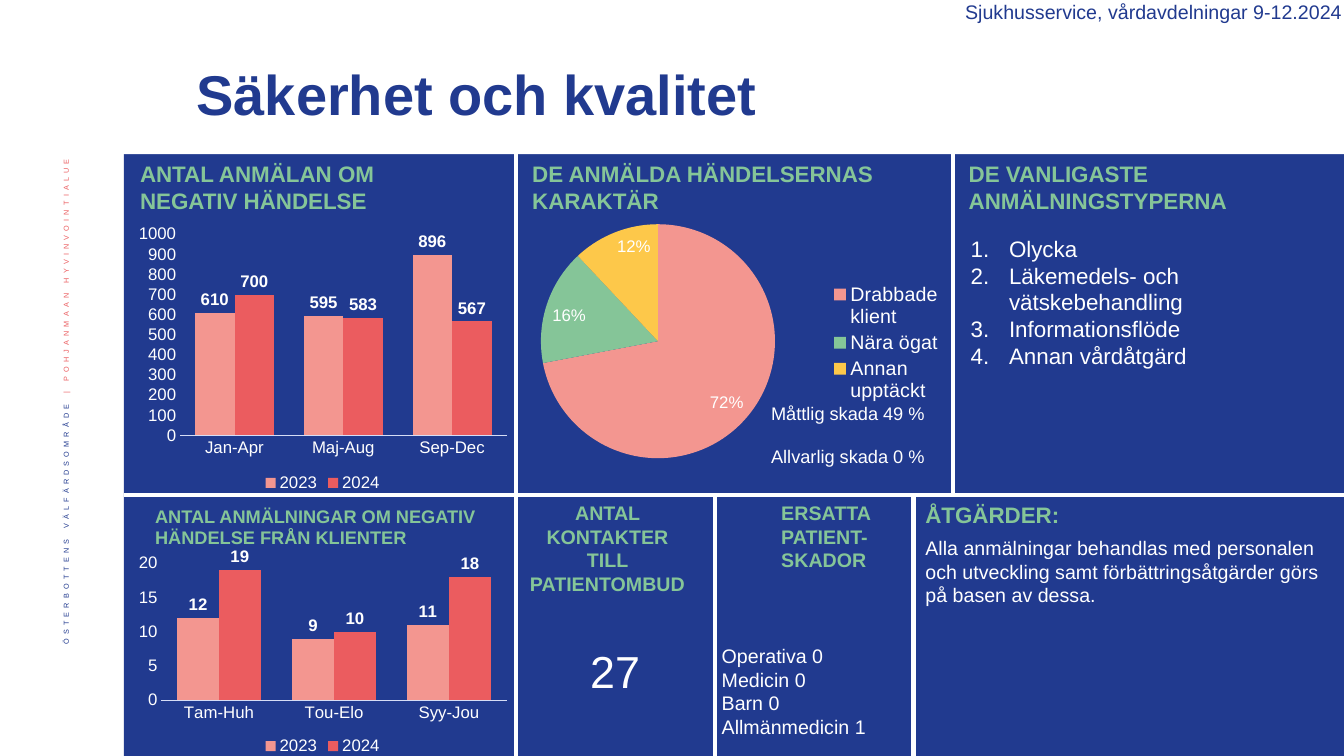
from lxml import etree
from pptx import Presentation
from pptx.chart.data import CategoryChartData
from pptx.dml.color import RGBColor
from pptx.enum.chart import XL_CHART_TYPE, XL_LABEL_POSITION, XL_LEGEND_POSITION, XL_TICK_MARK
from pptx.enum.shapes import MSO_CONNECTOR, MSO_SHAPE
from pptx.enum.text import MSO_ANCHOR, PP_ALIGN
from pptx.oxml.ns import qn
from pptx.util import Inches, Pt

LEFT, MID, RIGHT = PP_ALIGN.LEFT, PP_ALIGN.CENTER, PP_ALIGN.RIGHT
TOP, CENTER = MSO_ANCHOR.TOP, MSO_ANCHOR.MIDDLE
PIE, COLUMN = XL_CHART_TYPE.PIE, XL_CHART_TYPE.COLUMN_CLUSTERED
BELOW, BESIDE = XL_LEGEND_POSITION.BOTTOM, XL_LEGEND_POSITION.RIGHT
INSIDE, OUTSIDE = XL_LABEL_POSITION.INSIDE_END, XL_LABEL_POSITION.OUTSIDE_END
NO_TICK = XL_TICK_MARK.NONE
RECT, STRAIGHT = MSO_SHAPE.RECTANGLE, MSO_CONNECTOR.STRAIGHT

NAVY, WHITE, GREEN = "213A8F", "FFFFFF", "85C598"
PINK, RED, GOLD, PALE = "F39690", "EB5C5F", "FDC84A", "D6DDF6"


def color(code):
    return RGBColor.from_string(code)


def style(font, size, fill, bold=False):
    font.name, font.size, font.bold = "Arial", Pt(size), bold
    font.color.rgb = color(fill)


class Board:
    def __init__(self, slide):
        self.slide = slide
        self.shapes = slide.shapes

    def rect(self, x, y, w, h, fill):
        box = self.shapes.add_shape(RECT, Inches(x), Inches(y), Inches(w), Inches(h))
        box.shadow.inherit = False
        box.fill.solid()
        box.fill.fore_color.rgb = color(fill)
        box.line.fill.background()

    def rule(self, x1, y1, x2, y2):
        line = self.shapes.add_connector(STRAIGHT, Inches(x1), Inches(y1), Inches(x2), Inches(y2))
        line.line.color.rgb = color(WHITE)
        line.line.width = Pt(3)
        etree.SubElement(line._element.spPr, qn("a:effectLst"))

    def text(self, words, x, y, w, h, size=14, fill=WHITE, bold=False, align=LEFT,
             anchor=TOP, gap=0, lead=None, indent=0, numbered=False):
        """Each paragraph is a string or a list of (string, colour) runs."""
        box = self.shapes.add_textbox(Inches(x), Inches(y), Inches(w), Inches(h))
        frame = box.text_frame
        frame.word_wrap = True
        frame.vertical_anchor = anchor
        for i, para in enumerate([words] if isinstance(words, str) else words):
            p = frame.paragraphs[0] if i == 0 else frame.add_paragraph()
            p.alignment = align
            if lead:
                p.line_spacing = lead
            if i and gap:
                p.space_before = Pt(gap)
            if indent:
                props = p._p.get_or_add_pPr()
                props.set("marL", str(Inches(indent)))
                if numbered:
                    props.set("indent", str(-Inches(indent)))
                    etree.SubElement(props, qn("a:buAutoNum"), type="arabicPeriod")
            for part, tint in [(para, fill)] if isinstance(para, str) else para:
                run = p.add_run()
                run.text = part
                style(run.font, size, tint, bold)
        return frame

    def head(self, words, x, y, w, h, size=16, **form):
        self.text(words, x, y, w, h, size=size, fill=GREEN, bold=True, **form)

    def chart(self, kind, x, y, w, h, cats, series, place, size):
        data = CategoryChartData()
        data.categories = cats
        for name, vals in series.items():
            data.add_series(name, vals)
        frame = self.shapes.add_chart(kind, Inches(x), Inches(y), Inches(w), Inches(h), data)
        chart = frame.chart
        style(chart.font, 10, NAVY)
        chart.has_title = False
        chart.has_legend = True
        chart.legend.position = place
        chart.legend.include_in_layout = False
        style(chart.legend.font, size, WHITE)
        return chart

    def labels(self, plot, spot, bold):
        plot.has_data_labels = True
        marks = plot.data_labels
        marks.position = spot
        style(marks.font, 12, WHITE, bold)
        return marks

    def columns(self, x, y, w, h, cats, series, top, step):
        chart = self.chart(COLUMN, x, y, w, h, cats, series, BELOW, 12)
        plot = chart.plots[0]
        plot.gap_width, plot.overlap = 75, 0
        plot.vary_by_categories = False
        self.labels(plot, OUTSIDE, True).show_value = True
        for bars, fill in zip(plot.series, (PINK, RED)):
            bars.format.fill.solid()
            bars.format.fill.fore_color.rgb = color(fill)
        for axis in (chart.category_axis, chart.value_axis):
            axis.has_major_gridlines = False
            axis.major_tick_mark = axis.minor_tick_mark = NO_TICK
            style(axis.tick_labels.font, 12, WHITE)
        chart.category_axis.format.line.color.rgb = color(PALE)
        chart.category_axis.format.line.width = Pt(0.75)
        scale = chart.value_axis
        scale.format.line.fill.background()
        scale.minimum_scale, scale.maximum_scale, scale.major_unit = 0, top, step

    def pie(self, x, y, w, h, cats, series, fills, area):
        chart = self.chart(PIE, x, y, w, h, cats, series, BESIDE, 14)
        plot = chart.plots[0]
        plot.vary_by_categories = True
        marks = self.labels(plot, INSIDE, False)
        marks.show_value, marks.show_percentage = False, True
        marks.number_format, marks.number_format_is_linked = "0%", False
        for i, fill in enumerate(fills):
            slice_fill = plot.series[0].points[i].format.fill
            slice_fill.solid()
            slice_fill.fore_color.rgb = color(fill)
        # Fixed plot area, as shares of the chart
        plot_area = chart._chartSpace.chart.plotArea
        for old in plot_area.findall(qn("c:layout")):
            plot_area.remove(old)
        layout = etree.Element(qn("c:layout"))
        manual = etree.SubElement(layout, qn("c:manualLayout"))
        sides = zip(("x", "y", "w", "h"), area)
        modes = (("layoutTarget", "inner"), ("xMode", "edge"), ("yMode", "edge"))
        for tag, val in (*modes, *sides):
            etree.SubElement(manual, qn("c:" + tag), val=str(val))
        plot_area.insert(0, layout)


def main():
    deck = Presentation()
    deck.slide_width, deck.slide_height = Inches(13.33), Inches(7.5)
    board = Board(deck.slides.add_slide(deck.slide_layouts[6]))

    # Side strip, read upwards
    strip = board.text([[("ÖSTERBOTTENS VÄLFÄRDSOMRÅDE ", NAVY), ("| POHJANMAAN HYVINVOINTIALUE ", RED)]],
                       0.42, 1.42, 0.52, 5.73, size=9, align=RIGHT, anchor=CENTER, lead=0.9)
    strip._txBody.bodyPr.set("vert", "vert270")
    for run in strip.paragraphs[0].runs:
        props = run._r.get_or_add_rPr()
        props.set("baseline", "30000")
        props.set("spc", "300")

    # Panels and the rules between them
    board.rect(1.23, 0, 12.1, 7.5, NAVY)
    board.rect(1.15, 0, 12.18, 1.53, WHITE)
    board.rule(1.23, 4.91, 13.33, 4.91)
    for x in (5.12, 9.45):
        board.rule(x, 1.42, x, 4.91)
    for x in (5.12, 7.09, 9.06):
        board.rule(x, 4.91, x, 7.5)

    # Title and period
    board.text("Säkerhet och kvalitet", 1.85, 0.47, 9.98, 0.99, size=40, fill=NAVY,
               bold=True, anchor=CENTER, lead=0.9)
    board.text("Sjukhusservice, vårdavdelningar 9-12.2024", 6.29, -0.05, 7.12, 0.34,
               fill=NAVY, align=RIGHT)

    # Top row
    board.head("ANTAL ANMÄLAN OM NEGATIV HÄNDELSE", 1.29, 1.54, 3.11, 0.64)
    board.columns(1.3, 2.18, 3.8, 2.74, ("Jan-Apr", "Maj-Aug", "Sep-Dec"),
                  {"2023": (610, 595, 896), "2024": (700, 583, 567)}, 1000, 100)
    board.head("DE ANMÄLDA HÄNDELSERNAS KARAKTÄR", 5.18, 1.54, 4.18, 0.64)
    board.pie(5.15, 1.98, 4.3, 2.84, ("Drabbade klient", "Nära ögat", "Annan upptäckt"),
              {"Series 1": (72, 16, 12)}, (PINK, GREEN, GOLD), (0.05, 0.08, 0.54, 0.83))
    board.text(["Måttlig skada 49 %", "Allvarlig skada 0 %"], 7.55, 3.94, 2.03, 0.76, size=13, gap=15)
    board.head("DE VANLIGASTE ANMÄLNINGSTYPERNA", 9.51, 1.54, 3.57, 0.64)
    board.text(["Olycka", "Läkemedels- och vätskebehandling", "Informationsflöde", "Annan vårdåtgärd"],
               9.53, 2.28, 3.8, 1.75, size=16, indent=0.38, numbered=True)

    # Bottom row
    board.head("ANTAL ANMÄLNINGAR OM NEGATIV HÄNDELSE FRÅN KLIENTER", 1.44, 4.96, 3.81, 0.54, size=13)
    board.columns(1.3, 5.44, 3.8, 2.09, ("Tam-Huh", "Tou-Elo", "Syy-Jou"),
                  {"2023": (12, 9, 11), "2024": (19, 10, 18)}, 20, 5)
    board.head("ANTAL KONTAKTER TILL PATIENTOMBUD", 5.13, 4.92, 1.79, 1.04, size=14, align=MID)
    board.text("27", 5.12, 6.34, 1.97, 0.64, size=32, align=MID)
    board.head("ERSATTA PATIENT-SKADOR", 7.15, 4.92, 1.79, 0.81, size=14, indent=0.5)
    board.text(["Operativa 0", "Medicin 0", "Barn 0", "Allmänmedicin 1"], 7.06, 6.34, 1.97, 1.04)
    board.head("ÅTGÄRDER:", 9.08, 4.92, 4.03, 0.37)
    board.text("Alla anmälningar behandlas med personalen och utveckling samt "
               "förbättringsåtgärder görs på basen av dessa.", 9.08, 5.27, 4.25, 1.28)

    deck.save("out.pptx")


if __name__ == "__main__":
    main()
